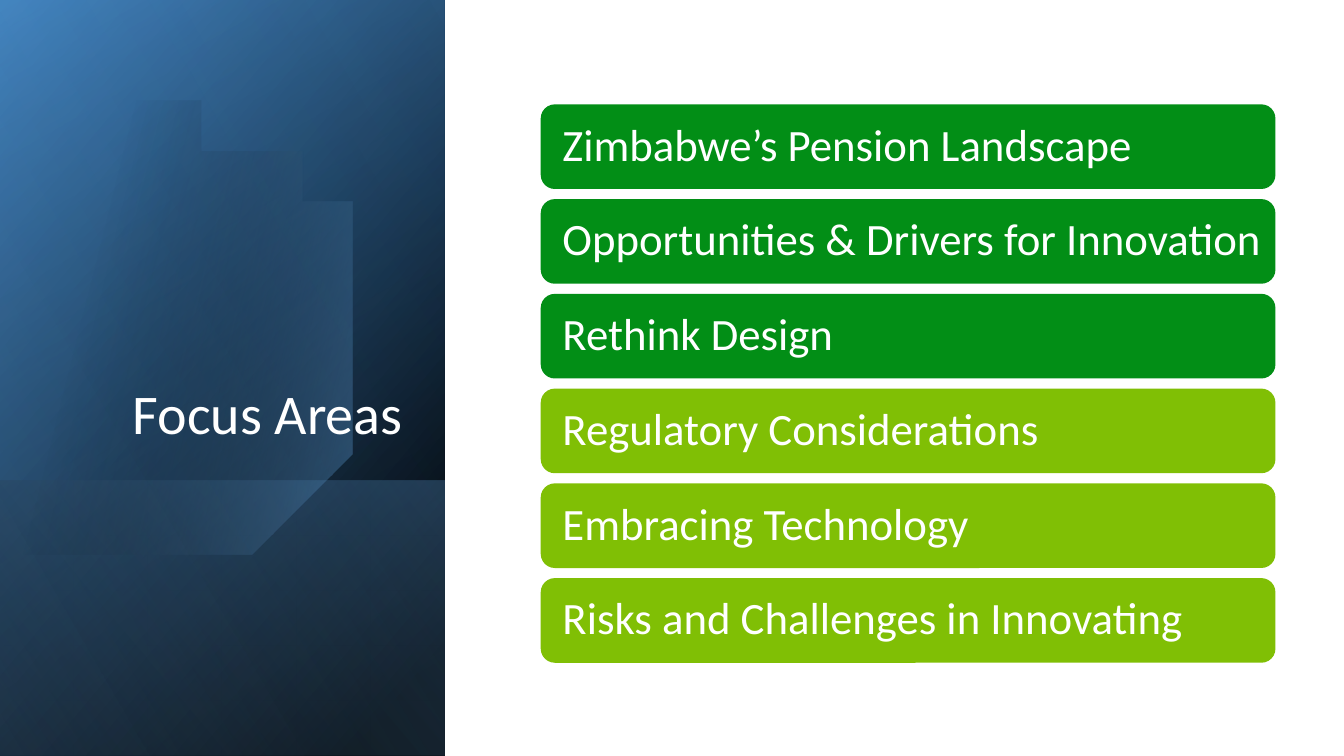
from dataclasses import dataclass
from math import acos, cos, sin

from lxml.etree import SubElement
from pptx import Presentation
from pptx.dml.color import RGBColor
from pptx.enum.shapes import MSO_SHAPE
from pptx.enum.text import MSO_ANCHOR, PP_ALIGN
from pptx.oxml.ns import qn
from pptx.util import Inches, Pt

WIDE, HIGH = 26.67, 15
SIDE = 8.83  # width of the left panel
FONT, WHITE = "Calibri", "FFFFFF"
GREEN, LIME = "028E16", "80BF05"

# Grid of the topic bars
LEFT, TOP, BAR, TALL, STEP = 10.73, 2.07, 14.58, 1.68, 1.88


@dataclass
class Stop:
    pos: int
    color: str
    alpha: int = 100


@dataclass
class Layer:
    """A gradient over the panel, from its top to its bottom edge."""
    top: float
    end: float
    angle: int
    stops: list[Stop]


@dataclass
class Topic:
    text: str
    color: str


BACK = [
    Layer(0, HIGH, 50, [Stop(8, "000000"), Stop(100, "2E75B6")]),
    Layer(0, HIGH, 30, [Stop(0, "000000", 0), Stop(99, "5B9BD5", 46)]),
    Layer(9.53, HIGH, 130, [Stop(2, "5B9BD5", 29), Stop(100, "000000", 30)]),
]
GLOW = [Stop(29, "000000", 0), Stop(100, "5B9BD5", 43)]
SHEEN = Layer(0, HIGH, 120, [Stop(0, "000000", 0), Stop(99, "9DC3E6", 11)])

TOPICS = [
    Topic("Zimbabwe’s Pension Landscape", GREEN),
    Topic("Opportunities & Drivers for Innovation", GREEN),
    Topic("Rethink Design", GREEN),
    Topic("Regulatory Considerations", LIME),
    Topic("Embracing Technology", LIME),
    Topic("Risks and Challenges in Innovating", LIME),
]


def rgb(color: str) -> RGBColor:
    return RGBColor.from_string(color)


def shade(shape, stops: list[Stop], angle: float) -> None:
    """Fill a shape with a linear gradient that may be transparent."""
    shape.shadow.inherit = False
    shape.line.fill.background()
    shape.fill.gradient()
    grad = shape._element.spPr.find(qn("a:gradFill"))
    for part in list(grad):
        grad.remove(part)
    grad.set("rotWithShape", "1")
    group = SubElement(grad, qn("a:gsLst"))
    for stop in stops:
        mark = SubElement(group, qn("a:gs"), pos=str(stop.pos * 1000))
        tint = SubElement(mark, qn("a:srgbClr"), val=stop.color)
        if stop.alpha < 100:
            SubElement(tint, qn("a:alpha"), val=str(stop.alpha * 1000))
    SubElement(grad, qn("a:lin"), ang=str(round(angle * 60000)), scaled="0")


def panel(slide, layer: Layer) -> None:
    """Draw a layer as a mirrored rectangle turned by a quarter."""
    long = layer.end - layer.top
    mid = (layer.top + layer.end) / 2
    shape = slide.shapes.add_shape(
        MSO_SHAPE.RECTANGLE, Inches((SIDE - long) / 2), Inches(mid - SIDE / 2),
        Inches(long), Inches(SIDE))
    shape.rotation = 90
    shape._element.spPr.find(qn("a:xfrm")).set("flipH", "1")
    shade(shape, layer.stops, layer.angle)


def disc(slide, x: float, y: float, radius: float, edge: float) -> None:
    """Draw a circle cut off by an upright line at edge."""
    limit, count = acos((edge - x) / radius), 120
    turns = [limit * (2 * i / count - 1) for i in range(count + 1)]
    dots = [(x + radius * cos(t), y + radius * sin(t)) for t in turns]
    form = slide.shapes.build_freeform(*dots[0], scale=Inches(1))
    form.add_line_segments(dots[1:], close=True)
    shade(form.convert_to_shape(), GLOW, 14)


def write(shape, text: str, size: int, align: PP_ALIGN, anchor: MSO_ANCHOR) -> None:
    frame = shape.text_frame
    frame.word_wrap = True
    frame.vertical_anchor = anchor
    line = frame.paragraphs[0]
    line.text = text
    line.alignment = align
    line.line_spacing = 0.9
    line.font.name = FONT
    line.font.size = Pt(size)
    line.font.color.rgb = rgb(WHITE)


def bar(slide, row: int, topic: Topic) -> None:
    shape = slide.shapes.add_shape(
        MSO_SHAPE.ROUNDED_RECTANGLE, Inches(LEFT), Inches(TOP + row * STEP),
        Inches(BAR), Inches(TALL))
    shape.shadow.inherit = False
    shape.fill.solid()
    shape.fill.fore_color.rgb = rgb(topic.color)
    shape.line.fill.background()
    shape.text_frame.margin_left = Inches(0.35)
    shape.text_frame.margin_right = Inches(0.1)
    write(shape, topic.text, 64, PP_ALIGN.LEFT, MSO_ANCHOR.MIDDLE)


def main() -> None:
    deck = Presentation()
    deck.slide_width, deck.slide_height = Inches(WIDE), Inches(HIGH)
    slide = deck.slides.add_slide(deck.slide_layouts[6])

    # Left panel
    for layer in BACK:
        panel(slide, layer)
    disc(slide, 2.88, 6.78, 4.57, -0.3)
    panel(slide, SHEEN)

    # Title
    title = slide.shapes.add_textbox(
        Inches(1.28), Inches(3.68), Inches(6.81), Inches(5.24))
    write(title, "Focus Areas", 80, PP_ALIGN.RIGHT, MSO_ANCHOR.BOTTOM)

    # Topic bars
    for row, topic in enumerate(TOPICS):
        bar(slide, row, topic)

    deck.save("out.pptx")


if __name__ == "__main__":
    main()
